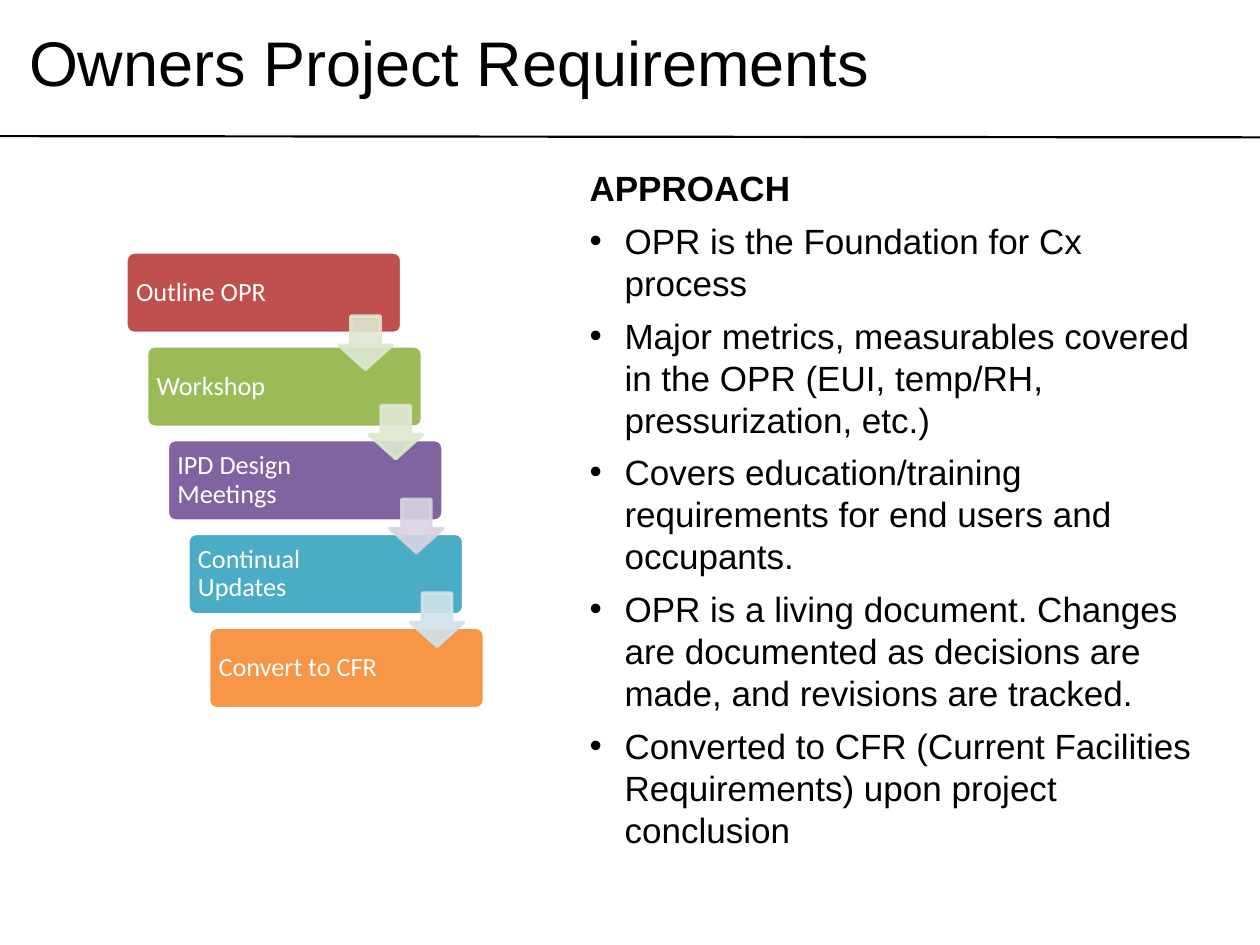
from lxml import etree
from pptx import Presentation
from pptx.dml.color import RGBColor
from pptx.enum.shapes import MSO_CONNECTOR as Connector, MSO_SHAPE as Shape
from pptx.enum.text import MSO_ANCHOR as Anchor, PP_ALIGN as Align
from pptx.oxml.ns import qn
from pptx.util import Pt

STEPS = [
    ("Outline OPR", "C0504D"),
    ("Workshop", "9BBB59"),
    ("IPD Design Meetings", "8064A2"),
    ("Continual Updates", "4BACC6"),
    ("Convert to CFR", "F79646"),
]
# Colour and offset from the regular staircase position
ARROWS = [
    ("DEE7D1", -5.5, 2.5),
    ("DEE7D1", 0, 0),
    ("D8D3E0", 0, 0),
    ("D0E3EA", 0, 0),
]
STEP_X, STEP_Y = 11.8, 53.6
APPROACH = [
    "OPR is the Foundation for Cx process",
    "Major metrics, measurables covered in the OPR (EUI, temp/RH, pressurization, etc.)",
    "Covers education/training requirements for end users and occupants.",
    "OPR is a living document. Changes are documented as decisions are made, "
    "and revisions are tracked.",
    "Converted to CFR (Current Facilities Requirements) upon project conclusion",
]


def color(value):
    return RGBColor.from_string(value)


class SlideBuilder:
    """Holds the text style and the slide being drawn."""

    font, ink, paper = "Arial", "000000", "FFFFFF"
    title_size, body_size, label_size = 36, 20, 15

    def __init__(self, slide):
        self.slide = slide

    def style(self, para, size, name=None, ink=None, bold=False):
        font = para.font
        font.name, font.size, font.bold = name or self.font, Pt(size), bold
        font.color.rgb = color(ink or self.ink)

    def text_frame(self, left, top, width, height, inset_top):
        box = self.slide.shapes.add_textbox(Pt(left), Pt(top), Pt(width), Pt(height))
        frame = box.text_frame
        frame.word_wrap = True
        frame.margin_top = Pt(inset_top)
        return frame

    def title(self, text):
        frame = self.text_frame(0, 5.8, 720, 66.2, inset_top=7.6)
        frame.margin_left = Pt(16.6)
        frame.text = text
        self.style(frame.paragraphs[0], self.title_size)

    def rule(self, start_y, end_y):
        line = self.slide.shapes.add_connector(
            Connector.STRAIGHT, Pt(0), Pt(start_y), Pt(720), Pt(end_y))
        line.line.color.rgb = color(self.ink)
        line.line.width = Pt(1.25)
        etree.SubElement(line._element.spPr, qn("a:effectLst"))

    def bullet_list(self, heading, items):
        frame = self.text_frame(329.8, 90, 362.9, 486, inset_top=5)
        frame.text = "\n".join([heading, *items])
        for index, para in enumerate(frame.paragraphs):
            para.line_spacing = Pt(24)
            para.space_before = Pt(4 if index else 0)
            para.space_after = Pt(2.2)
            if index:
                self.bullet(para)
            self.style(para, self.body_size, bold=index == 0)

    def bullet(self, para):
        props = para._p.get_or_add_pPr()
        props.set("marL", str(Pt(20)))
        props.set("indent", str(-Pt(20)))
        etree.SubElement(props, qn("a:buFont")).set("typeface", self.font)
        etree.SubElement(props, qn("a:buChar")).set("char", "•")

    def shape(self, kind, left, top, width, height, fill, line, adjustments):
        shape = self.slide.shapes.add_shape(
            kind, Pt(left), Pt(top), Pt(width), Pt(height))
        shape.shadow.inherit = False
        shape.fill.solid()
        shape.fill.fore_color.rgb = color(fill)
        shape.line.color.rgb = color(line)
        shape.line.width = Pt(2)
        for index, value in enumerate(adjustments):
            shape.adjustments[index] = value
        return shape

    def step(self, left, top, text, fill):
        card = self.shape(Shape.ROUNDED_RECTANGLE, left, top, 157.6, 46.6,
                          fill, self.paper, [0.1])
        frame = card.text_frame
        frame.word_wrap = True
        frame.vertical_anchor = Anchor.MIDDLE
        frame.margin_left, frame.margin_right = Pt(4.4), Pt(46.6)
        frame.margin_top = frame.margin_bottom = Pt(4)
        frame.text = text
        para = frame.paragraphs[0]
        para.alignment = Align.LEFT
        para.line_spacing = 0.9
        self.style(para, self.label_size, "Calibri", self.paper)

    def arrow(self, left, top, fill):
        arrow = self.shape(Shape.DOWN_ARROW, left, top, 30.3, 30.3,
                           fill, fill, [0.55, 0.45])
        for tint in arrow._element.spPr.iter(qn("a:srgbClr")):
            etree.SubElement(tint, qn("a:alpha")).set("val", "90000")


def main():
    deck = Presentation()
    deck.slide_width, deck.slide_height = Pt(720), Pt(540)
    page = SlideBuilder(deck.slides.add_slide(deck.slide_layouts[6]))

    page.rule(77.8, 78.5)
    page.title("Owners Project Requirements")
    page.bullet_list("APPROACH", APPROACH)
    for index, (text, fill) in enumerate(STEPS):
        page.step(72 + index * STEP_X, 144 + index * STEP_Y, text, fill)
    for index, (fill, shift_x, shift_y) in enumerate(ARROWS):
        page.arrow(199.2 + index * STEP_X + shift_x,
                   178.2 + index * STEP_Y + shift_y, fill)
    deck.save("out.pptx")


if __name__ == "__main__":
    main()
